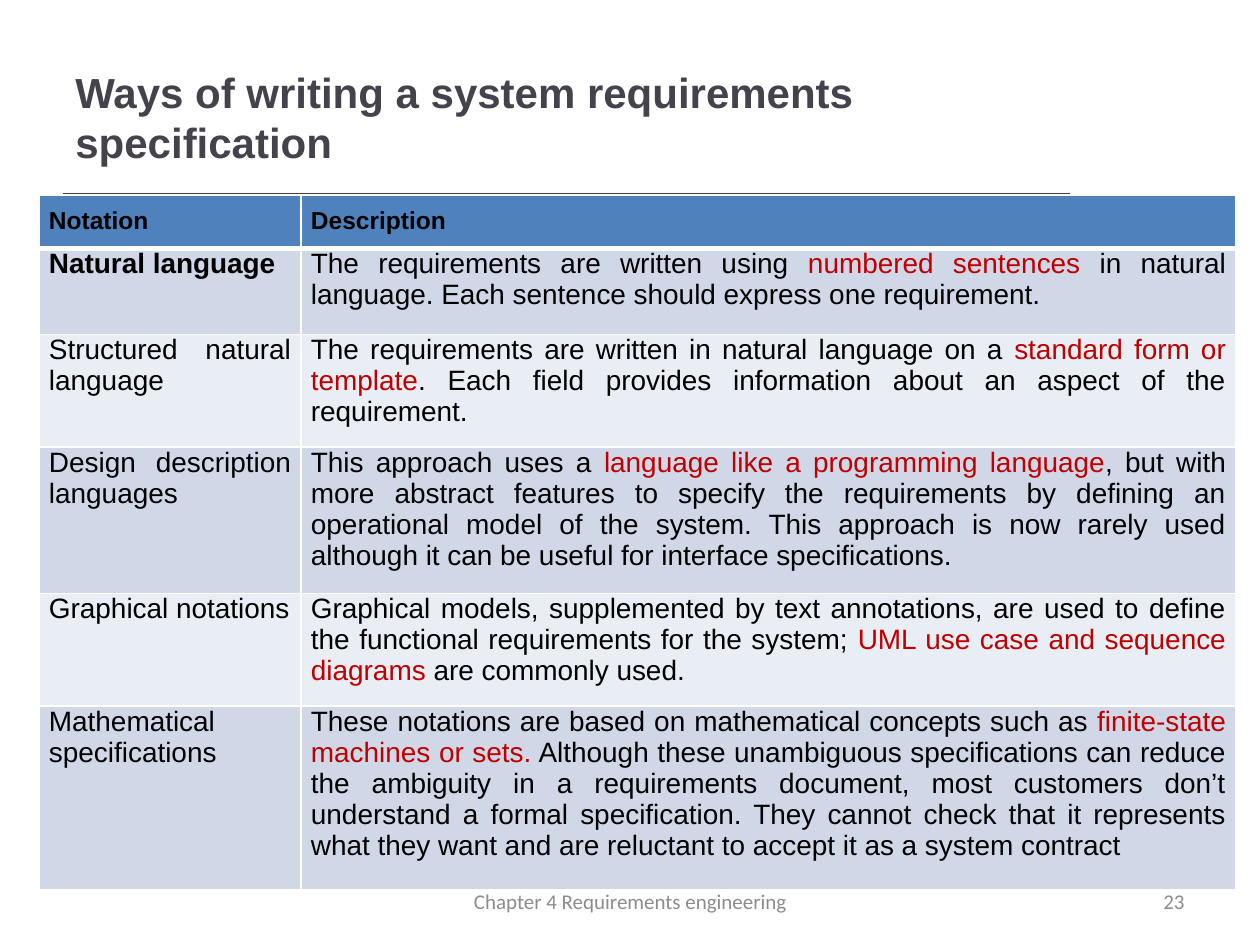
import pptx
import pptx.util
import pptx.dml.color
import pptx.enum.shapes
import pptx.enum.text
import pptx.oxml
import pptx.oxml.ns

PX = 914400 // 126  # one px in EMU
COLORS = {
    "title": "46424D", "text": "000000", "accent": "C00000", "footer": "8C8C8C",
    "rule": "404040", "header": "4F81BD", "odd": "D0D8E8", "even": "E9EDF4",
    "border": "FFFFFF",
}
ALIGN = pptx.enum.text.PP_ALIGN

TITLE = "Ways of writing a system requirements specification"
FOOTER = "Chapter 4 Requirements engineering"
PAGE = "23"
HEADER = ("Notation", "Description")
# Notation, then the description as plain, accented and plain text
NOTATIONS = [
    ("Natural language",
     ("The requirements are written using ", "numbered sentences ",
      "in natural language. Each sentence should express one requirement.")),
    ("Structured natural language",
     ("The requirements are written in natural language on a ",
      "standard form or template",
      ". Each field provides information about an aspect of the requirement.")),
    ("Design description languages",
     ("This approach uses a ", "language like a programming language",
      ", but with more abstract features to specify the requirements by defining "
      "an operational model of the system. This approach is now rarely used "
      "although it can be useful for interface specifications.")),
    ("Graphical notations",
     ("Graphical models, supplemented by text annotations, are used to define "
      "the functional requirements for the system; ",
      "UML use case and sequence diagrams ", "are commonly used.")),
    ("Mathematical specifications",
     ("These notations are based on mathematical concepts such as ",
      "finite-state machines or sets.",
      " Although these unambiguous specifications can reduce the ambiguity in a "
      "requirements document, most customers don’t understand a formal "
      "specification. They cannot check that it represents what they want and "
      "are reluctant to accept it as a system contract")),
]
COLUMN_WIDTHS = (262, 935)
ROW_HEIGHTS = (51, 86, 106, 137, 106, 184)


def px(value):
    return pptx.util.Emu(value * PX)


def rgb(name):
    return pptx.dml.color.RGBColor.from_string(COLORS[name])


def add_run(paragraph, text, size, color, font="Arial", bold=False):
    run = paragraph.add_run()
    run.text = text
    run.font.name = font
    run.font.size = pptx.util.Pt(size)
    run.font.bold = bold
    run.font.color.rgb = rgb(color)


def add_text(slide, box, text, align, size, color, font, bold=False):
    frame = slide.shapes.add_textbox(*map(px, box)).text_frame
    frame.word_wrap = True
    frame.vertical_anchor = pptx.enum.text.MSO_ANCHOR.MIDDLE
    paragraph = frame.paragraphs[0]
    paragraph.alignment = align
    add_run(paragraph, text, size, color, font, bold)


def style_cell(cell, row):
    """Set margins, borders and fill; borders must precede the fill."""
    cell.margin_left = cell.margin_right = px(10)
    cell.margin_top = px(0 if row else 12)
    cell.margin_bottom = px(12)
    properties = cell._tc.get_or_add_tcPr()
    thick_side = {0: "B", 1: "T"}.get(row)
    for side in "LRTB":
        width = pptx.util.Pt(3 if side == thick_side else 1)
        properties.append(pptx.oxml.parse_xml(
            f'<a:ln{side} {pptx.oxml.ns.nsdecls("a")} w="{width}"><a:solidFill>'
            f'<a:srgbClr val="{COLORS["border"]}"/></a:solidFill></a:ln{side}>'))
    cell.fill.solid()
    cell.fill.fore_color.rgb = rgb("header" if row == 0 else "odd" if row % 2 else "even")


def add_notation_table(slide):
    table = slide.shapes.add_table(
        len(ROW_HEIGHTS), len(COLUMN_WIDTHS), px(39), px(195),
        px(sum(COLUMN_WIDTHS)), px(sum(ROW_HEIGHTS))).table
    for column, width in zip(table.columns, COLUMN_WIDTHS):
        column.width = px(width)
    for table_row, height in zip(table.rows, ROW_HEIGHTS):
        table_row.height = px(height)

    for row, contents in enumerate([HEADER] + NOTATIONS):
        for column, content in enumerate(contents):
            cell = table.cell(row, column)
            style_cell(cell, row)
            paragraph = cell.text_frame.paragraphs[0]
            paragraph.alignment = ALIGN.JUSTIFY if row or column else ALIGN.LEFT
            parts = (content,) if isinstance(content, str) else content
            bold = row == 0 or (row == 1 and column == 0)
            for index, part in enumerate(parts):
                add_run(paragraph, part, 16 if row else 14,
                        "accent" if index == 1 else "text", bold=bold)


def main():
    presentation = pptx.Presentation()
    presentation.slide_width, presentation.slide_height = px(1260), px(945)
    slide = presentation.slides.add_slide(presentation.slide_layouts[6])

    # Rule under the title
    rule = slide.shapes.add_connector(
        pptx.enum.shapes.MSO_CONNECTOR.STRAIGHT, px(63), px(195), px(1070), px(195))
    rule.line.color.rgb = rgb("rule")
    rule.line.width = pptx.util.Pt(2)
    rule._element.spPr.append(pptx.oxml.parse_xml(
        f'<a:effectLst {pptx.oxml.ns.nsdecls("a")}/>'))

    # Title, table and footer
    add_text(slide, (63, 38, 1006, 157), TITLE, ALIGN.LEFT, 24, "title", "Arial", True)
    add_notation_table(slide)
    add_text(slide, (903, 876, 294, 50), PAGE, ALIGN.RIGHT, 12, "footer", "Calibri")
    add_text(slide, (431, 876, 399, 50), FOOTER, ALIGN.CENTER, 12, "footer", "Calibri")

    presentation.save("out.pptx")


if __name__ == "__main__":
    main()
